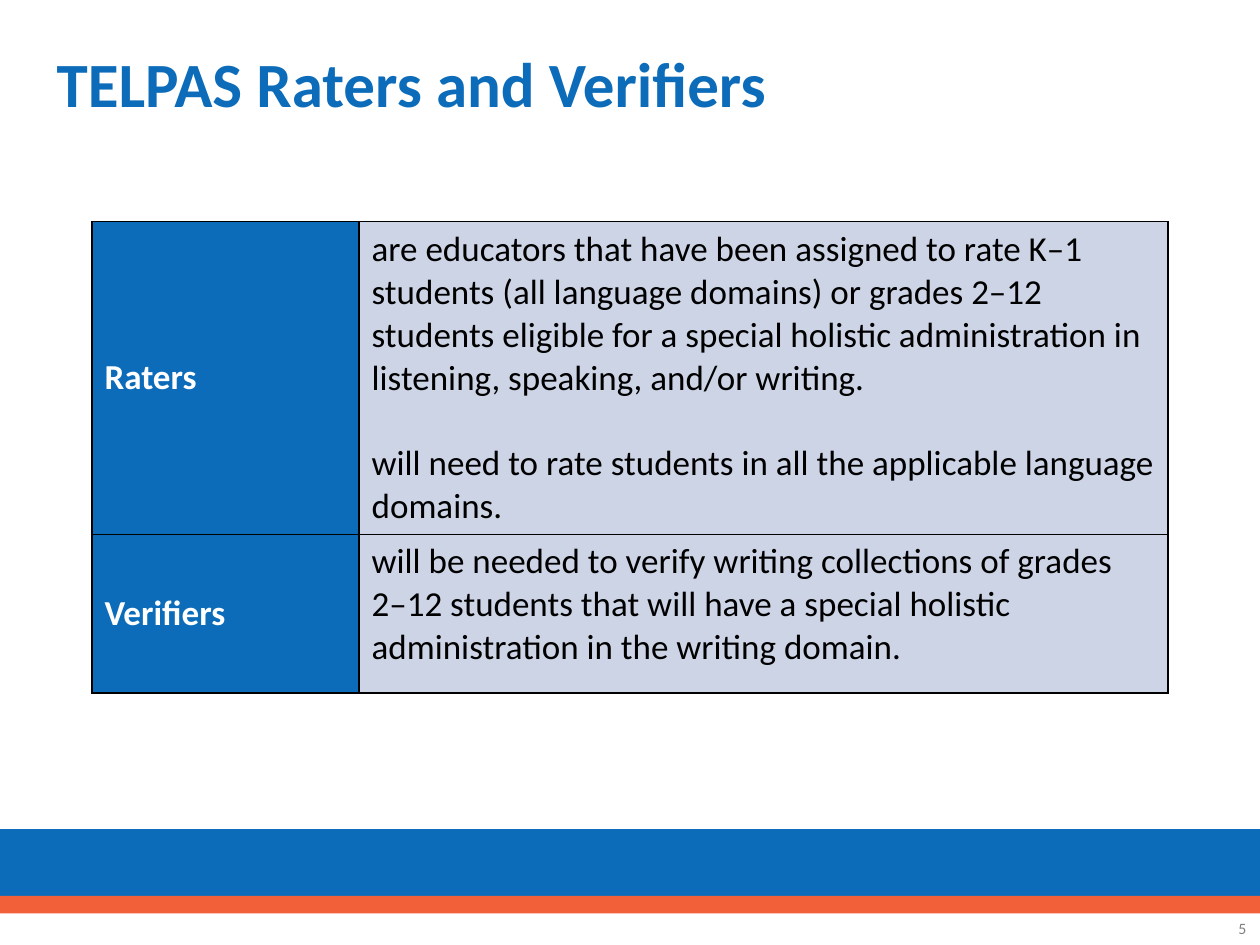
from dataclasses import dataclass

from lxml import etree
from pptx import Presentation
from pptx.dml.color import RGBColor
from pptx.enum.shapes import MSO_SHAPE
from pptx.enum.text import MSO_ANCHOR, PP_ALIGN
from pptx.oxml.ns import qn
from pptx.util import Inches, Pt

RECT = MSO_SHAPE.RECTANGLE
MIDDLE, TOP = MSO_ANCHOR.MIDDLE, MSO_ANCHOR.TOP
LEFT, RIGHT = PP_ALIGN.LEFT, PP_ALIGN.RIGHT


@dataclass(frozen=True)
class Theme:
    """Colours, font and type sizes of the slide."""
    blue: str = "0D6CB9"
    orange: str = "F16038"
    pale: str = "CCD4E6"
    white: str = "FFFFFF"
    black: str = "000000"
    gray: str = "808080"
    font: str = "Calibri"
    head: int = 36
    body: int = 20
    note: int = 9


THEME = Theme()
ROLES = [
    ("Raters", [
        "are educators that have been assigned to rate K–1 students "
        "(all language domains) or grades 2–12 students eligible for a "
        "special holistic administration in listening, speaking, and/or writing.",
        "will need to rate students in all the applicable language domains."]),
    ("Verifiers", [
        "will be needed to verify writing collections of grades 2–12 students "
        "that will have a special holistic administration in the writing domain."]),
]


def paint(fill, color):
    """Give a fill one solid colour."""
    fill.solid()
    fill.fore_color.rgb = RGBColor.from_string(color)


def style(font, size, color, bold=False):
    """Set the look of a font."""
    font.name, font.size, font.bold = THEME.font, Pt(size), bold
    font.color.rgb = RGBColor.from_string(color)


def place(shape, box):
    """Move a shape to a box given in inches."""
    shape.left, shape.top, shape.width, shape.height = map(Inches, box)


def add_title(slide, box, text):
    """Fill the title placeholder."""
    title = slide.shapes.title
    place(title, box)
    frame = title.text_frame
    frame.text = text
    frame.vertical_anchor, frame.word_wrap = MIDDLE, True
    line = frame.paragraphs[0]
    line.alignment, line.line_spacing = LEFT, 0.9
    style(line.runs[0].font, THEME.head, THEME.blue, True)


def add_band(slide, box, color):
    """Draw a plain coloured band."""
    band = slide.shapes.add_shape(RECT, *map(Inches, box))
    band.shadow.inherit = False
    paint(band.fill, color)
    band.line.fill.background()


def add_foot(slide, box):
    """Stack the two footer bands, the lower one over the upper."""
    left, top, width, height = box
    thin = 0.14
    add_band(slide, (left, top, width, height - thin + 0.05), THEME.blue)
    add_band(slide, (left, top + height - thin, width, thin), THEME.orange)


def add_edges(cell):
    """Rule all four sides of a cell, ahead of its fill."""
    props = cell._tc.get_or_add_tcPr()
    for spot, side in enumerate(("lnL", "lnR", "lnT", "lnB")):
        edge = etree.Element(qn(f"a:{side}"), w=str(Pt(1)))
        solid = etree.SubElement(edge, qn("a:solidFill"))
        etree.SubElement(solid, qn("a:srgbClr"), val=THEME.black)
        props.insert(spot, edge)


def fill_cell(cell, lines, back, color, bold, anchor):
    """Write and format one table cell, a line apart between paragraphs."""
    cell.text = "\n".join(lines)
    cell.vertical_anchor = anchor
    paint(cell.fill, back)
    add_edges(cell)
    for spot, line in enumerate(cell.text_frame.paragraphs):
        if spot:
            line.space_before = Pt(THEME.body * 1.22)
        style(line.runs[0].font, THEME.body, color, bold)


def add_roles(slide, box, cols, rows):
    """Build the table of roles and their duties."""
    table = slide.shapes.add_table(len(rows), len(cols), *map(Inches, box)).table
    table.first_row = table.horz_banding = False
    for col, width in zip(table.columns, cols):
        col.width = Inches(width)
    for row, height, (role, duties) in zip(table.rows, rows, ROLES):
        row.height = Inches(height)
        name, text = row.cells
        fill_cell(name, [role], THEME.blue, THEME.white, True, MIDDLE)
        fill_cell(text, duties, THEME.pale, THEME.black, False, TOP)


def add_number(slide, box, text):
    """Set the page number."""
    frame = slide.shapes.add_textbox(*map(Inches, box)).text_frame
    frame.word_wrap, frame.vertical_anchor = True, MIDDLE
    frame.text = text
    line = frame.paragraphs[0]
    line.alignment = RIGHT
    style(line.runs[0].font, THEME.note, THEME.gray)


def main():
    """Build and save the slide."""
    deck = Presentation()
    deck.slide_width, deck.slide_height = Inches(10), Inches(7.5)
    slide = deck.slides.add_slide(deck.slide_layouts[5])
    paint(slide.background.fill, THEME.white)
    add_foot(slide, (0, 6.58, 10, 0.67))
    add_title(slide, (0.35, 0.17, 9.3, 1.05), "TELPAS Raters and Verifiers")
    add_roles(slide, (0.73, 1.76, 8.55, 3.7), (2.12, 6.42), (2.44, 1.26))
    add_number(slide, (9.6, 7.24, 0.39, 0.26), "5")
    deck.save("out.pptx")


if __name__ == "__main__":
    main()
